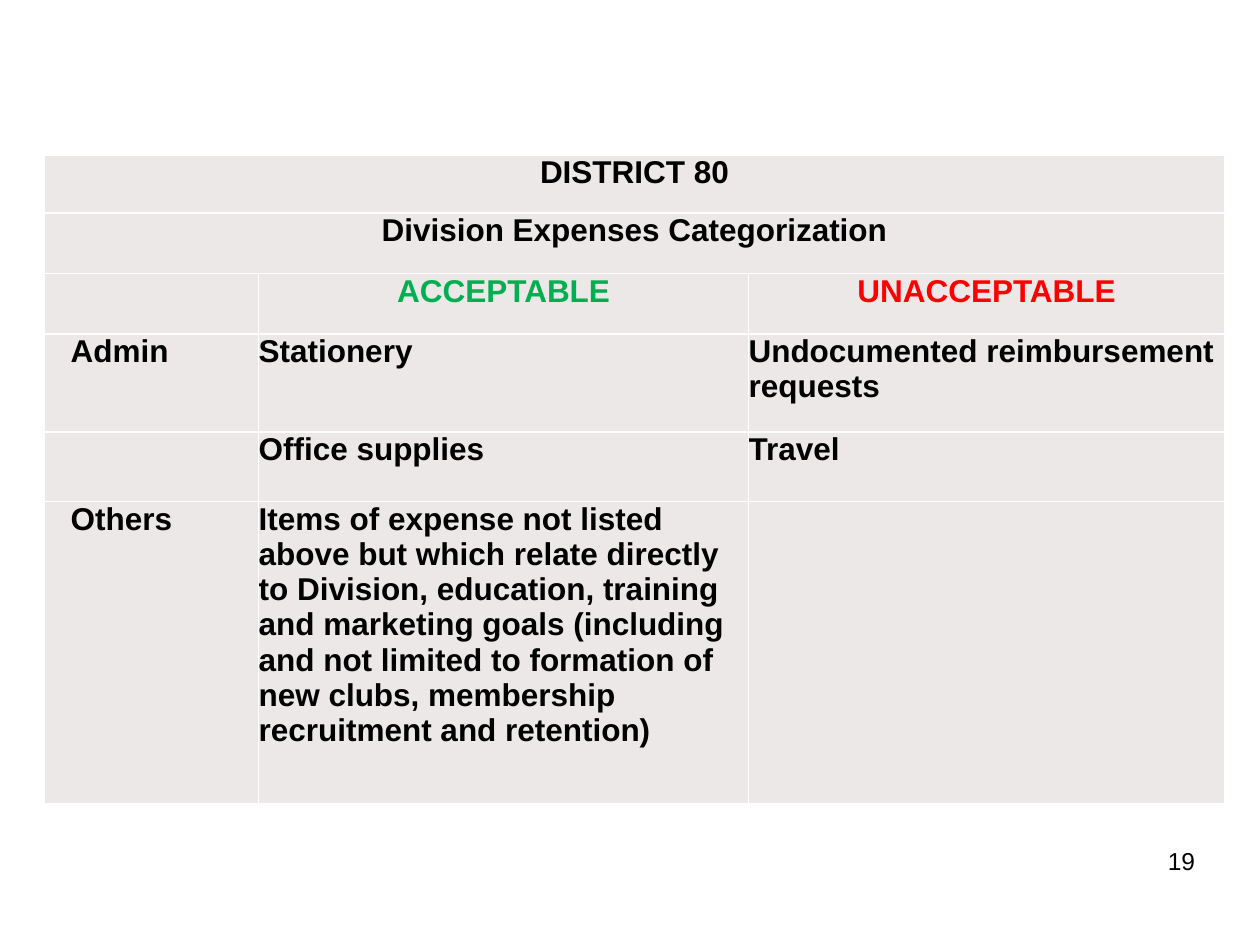
from lxml import etree
from pptx import Presentation
from pptx.dml.color import RGBColor
from pptx.enum import text
from pptx.oxml.ns import qn
from pptx.util import Pt

BLACK = RGBColor(0, 0, 0)
GREEN = RGBColor(0x00, 0xB0, 0x50)
RED = RGBColor(0xFF, 0, 0)
GREY = RGBColor(0xEC, 0xE8, 0xE8)
WHITE = RGBColor(0xFF, 0xFF, 0xFF)
LEFT, MID, RIGHT = (text.PP_ALIGN.LEFT, text.PP_ALIGN.CENTER,
                    text.PP_ALIGN.RIGHT)

ROWS = [
    ("DISTRICT 80", "", ""),
    ("Division Expenses Categorization", "", ""),
    ("", "ACCEPTABLE", "UNACCEPTABLE"),
    ("Admin", "Stationery", "Undocumented reimbursement requests"),
    ("", "Office supplies", "Travel"),
    ("Others",
     "Items of expense not listed above but which relate directly to "
     "Division, education, training and marketing goals (including and not "
     "limited to formation of new clubs, membership recruitment and "
     "retention)", ""),
]
PAGE = "19"
TITLES, HEADS = 2, 3          # full-width rows, then all centred rows
HEAD_INKS = (BLACK, GREEN, RED)
WIDTHS = (122.4, 280, 272)
HEIGHTS = (33, 34.5, 34.5, 56.2, 39.6, 172.6)
INDENT = 15


def put(frame, words, align, **font):
    par = frame.paragraphs[0]
    par.text = words
    par.alignment = align
    ink = font.pop("ink", BLACK)
    for key, val in {"name": "Arial", **font}.items():
        setattr(par.font, key, val)
    par.font.color.rgb = ink


def edge(cell):
    """Draw a thin white line on all four sides of a cell."""
    props = cell._tc.get_or_add_tcPr()
    for spot, side in enumerate("LRTB"):
        line = etree.Element(qn(f"a:ln{side}"), w=str(Pt(1)))
        fill = etree.SubElement(line, qn("a:solidFill"))
        etree.SubElement(fill, qn("a:srgbClr"), val=str(WHITE))
        props.insert(spot, line)


def add_grid(slide):
    grid = slide.shapes.add_table(
        len(ROWS), len(WIDTHS), Pt(25.4), Pt(88.8),
        Pt(sum(WIDTHS)), Pt(sum(HEIGHTS))).table
    for col, width in zip(grid.columns, WIDTHS):
        col.width = Pt(width)
    for row, height in zip(grid.rows, HEIGHTS):
        row.height = Pt(height)
    for r, row in enumerate(ROWS):
        for c, words in enumerate(row):
            cell = grid.cell(r, c)
            head = r < HEADS
            for side in ("left", "right", "top", "bottom"):
                setattr(cell, f"margin_{side}", 0)
            if c == 0 and not head:
                cell.margin_left = Pt(INDENT)
            cell.fill.solid()
            cell.fill.fore_color.rgb = GREY
            edge(cell)
            put(cell.text_frame, words, MID if head else LEFT, size=Pt(18),
                bold=True, ink=HEAD_INKS[c] if head else BLACK)
    for r in range(TITLES):
        grid.cell(r, 0).merge(grid.cell(r, len(WIDTHS) - 1))


def main():
    deck = Presentation()
    deck.slide_width, deck.slide_height = Pt(720), Pt(540)
    slide = deck.slides.add_slide(deck.slide_layouts[6])
    add_grid(slide)
    box = slide.shapes.add_textbox(Pt(522), Pt(480), Pt(168), Pt(37.5))
    box.text_frame.word_wrap = True
    put(box.text_frame, PAGE, RIGHT, size=Pt(14))
    deck.save("out.pptx")


if __name__ == "__main__":
    main()
